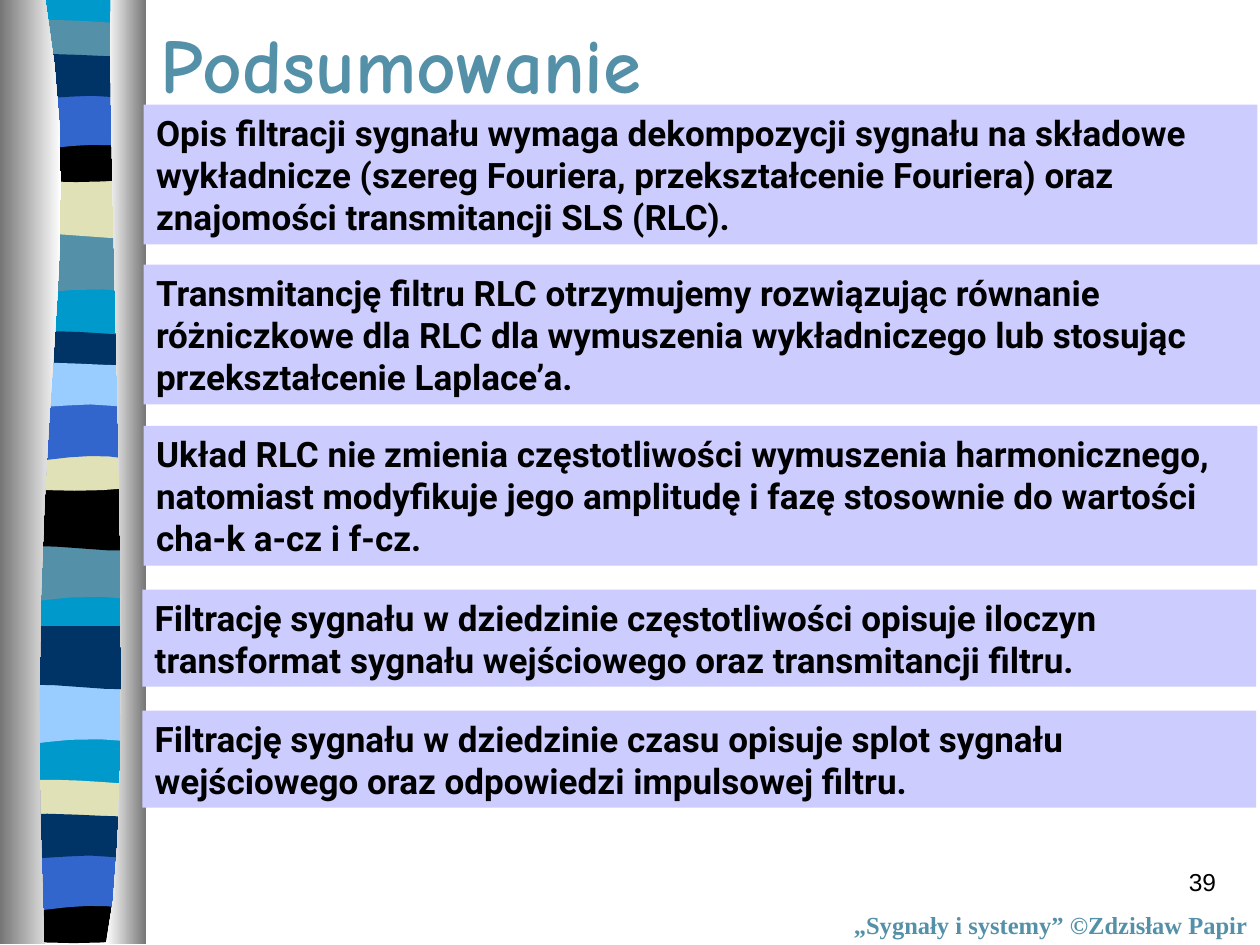
from math import ceil

from pptx import Presentation
from pptx.dml.color import RGBColor
from pptx.enum.shapes import MSO_SHAPE
from pptx.enum.text import MSO_ANCHOR, PP_ALIGN
from pptx.util import Inches, Pt

COLORS = {
    "cyan": "0099CC", "teal": "5490A8", "sand": "E1E1B7", "black": "000000",
    "blue": "3366CC", "navy": "003366", "sky": "99CCFF", "lilac": "CCCCFF",
    "gray": "767676", "white": "FFFFFF",
}

TITLE = "Podsumowanie"
FOOTER = "„Sygnały i systemy” ©Zdzisław Papir"
NUMBER = "39"

SUMMARY = [
    (1.14, 0.83, 8.84, 1.11, "Opis filtracji sygnału wymaga dekompozycji sygnału na składowe wykładnicze "
     "(szereg Fouriera, przekształcenie Fouriera) oraz znajomości transmitancji SLS (RLC)."),
    (1.14, 2.1, 8.86, 1.11, "Transmitancję filtru RLC otrzymujemy rozwiązując równanie różniczkowe dla RLC "
     "dla wymuszenia wykładniczego lub stosując przekształcenie Laplace’a."),
    (1.14, 3.38, 8.84, 1.11, "Układ RLC nie zmienia częstotliwości wymuszenia harmonicznego, natomiast "
     "modyfikuje jego amplitudę i fazę stosownie do wartości cha-k a-cz i f-cz."),
    (1.13, 4.68, 8.84, 0.77, "Filtrację sygnału w dziedzinie częstotliwości opisuje iloczyn transformat "
     "sygnału wejściowego oraz transmitancji filtru."),
    (1.13, 5.64, 8.84, 0.77, "Filtrację sygnału w dziedzinie czasu opisuje splot sygnału wejściowego "
     "oraz odpowiedzi impulsowej filtru."),
]

WAVES = {
    "sag": [(1.08, 0), (1.08, 0.47), (0.34, 0.39, 0.18, 0.55, 0, 0.47), (0, 0)],
    "swell": [(1.08, 0), (1.08, 0.48), (0.91, 0.55, 0.34, 0.42, 0, 0.48), (0, 0)],
    "lens": [(1.08, 0.05), (1.08, 0.29), (0.91, 0.33, 0.18, 0.33, 0, 0.29), (0, 0.05),
             (0.07, 0, 0.24, 0.01, 0.42, 0.01), (0.6, 0.01, 0.95, 0.04, 1.08, 0.05)],
    "bowl": [(1.08, 0), (1.08, 0.32), (0.91, 0.38, 0.18, 0.38, 0, 0.32), (0, 0),
             (0.67, 0.05, 0.86, 0, 1.08, 0)],
    "arch": [(1.08, 0), (1.08, 0.48), (0.91, 0.42, 0.84, 0.42, 0.66, 0.42),
             (0.48, 0.42, 0.16, 0.48, 0, 0.48), (0, 0)],
    "ripple": [(1.08, 0.05), (1.08, 0.36), (1.01, 0.41, 0.85, 0.36, 0.67, 0.36),
               (0.49, 0.36, 0.11, 0.41, 0, 0.36), (0, 0.05),
               (0.15, 0, 0.74, 0.05, 0.92, 0.05)],
}

BAND_GROUPS = [
    (0.06, [("sag", 1.85, "teal"), ("swell", 1.39, "sand"), ("lens", 0.15, "teal"),
            ("bowl", 1.08, "black"), ("arch", 0.73, "blue"), ("ripple", 0.4, "navy")]),
    (0.05, [("sag", 4.29, "teal"), ("swell", 3.87, "black"), ("lens", 2.62, "navy"),
            ("bowl", 3.53, "sand"), ("arch", 3.2, "blue"), ("ripple", 2.85, "sky")]),
    (0.04, [("sag", 5.42, "sky"), ("swell", 4.97, "navy"), ("lens", 6.18, "sand"),
            ("bowl", 7.12, "black"), ("arch", 6.77, "blue"), ("ripple", 6.43, "navy")]),
]

BACKDROP = [(1.14, 0), (1.14, 7.47), (0.06, 7.47), (0.06, 0)]
LEFT_EDGE = [(0.36, 0), (0.72, 2.16, 0.17, 2.96, 0.35, 7.49), (0, 7.49), (0, 0)]
RIGHT_EDGE = [(0.88, 0), (0.84, 1.25, 1.11, 6.46, 0.84, 7.49), (1.16, 7.49), (1.16, 0)]

STEPS_PER_INCH = 5
MOST_STEPS = 12


def color(name):
    return RGBColor.from_string(COLORS[name])


def trace(outline):
    points = [outline[0]]
    for step in outline[1:]:
        if len(step) == 2:
            points.append(step)
            continue
        x0, y0 = points[-1]
        x1, y1, x2, y2, x3, y3 = step
        reach = max(abs(x3 - x0), abs(y3 - y0))
        count = min(MOST_STEPS, ceil(STEPS_PER_INCH * reach))
        for index in range(1, count + 1):
            t = index / count
            a, b, c, d = (1 - t) ** 3, 3 * t * (1 - t) ** 2, 3 * t * t * (1 - t), t ** 3
            points.append((a * x0 + b * x1 + c * x2 + d * x3, a * y0 + b * y1 + c * y2 + d * y3))
    return points


def draw_outline(page, outline, fills, left=0, top=0):
    points = [(Inches(left + x), Inches(top + y)) for x, y in trace(outline)]
    builder = page.shapes.build_freeform(*points[0])
    builder.add_line_segments(points[1:], close=True)
    shape = builder.convert_to_shape()
    shape.shadow.inherit = False
    shape.line.fill.background()
    if len(fills) == 1:
        shape.fill.solid()
        shape.fill.fore_color.rgb = color(fills[0])
    else:
        shape.fill.gradient()
        shape.fill.gradient_angle = 0
        for stop, name in zip(shape.fill.gradient_stops, fills):
            stop.color.rgb = color(name)


def write(box, text, *, font, size, ink="black", bold=False, align=PP_ALIGN.LEFT,
          anchor=MSO_ANCHOR.TOP, wrap=True):
    frame = box.text_frame
    frame.word_wrap = wrap
    frame.vertical_anchor = anchor
    para = frame.paragraphs[0]
    para.alignment = align
    span = para.add_run()
    span.text = text
    span.font.name = font
    span.font.size = Pt(size)
    span.font.bold = bold
    span.font.color.rgb = color(ink)


def main():
    deck = Presentation()
    deck.slide_width, deck.slide_height = Inches(10), Inches(7.5)
    page = deck.slides.add_slide(deck.slide_layouts[5])

    draw_outline(page, BACKDROP, ["cyan"])
    for left, bands in BAND_GROUPS:
        for wave, top, fill in bands:
            draw_outline(page, WAVES[wave], [fill], left, top)
    draw_outline(page, LEFT_EDGE, ["gray", "white"])
    draw_outline(page, RIGHT_EDGE, ["white", "gray"])

    title = page.shapes.title
    title.left, title.top, title.width, title.height = map(Inches, (1.17, 0, 8.5, 1))
    write(title, TITLE, font="Comic Neue", size=44, ink="teal", bold=True, anchor=MSO_ANCHOR.MIDDLE)

    footer = page.shapes.add_textbox(*map(Inches, (6.59, 7.17, 3.41, 0.34)))
    write(footer, FOOTER, font="Times New Roman", size=14, ink="teal", bold=True,
          align=PP_ALIGN.RIGHT, wrap=False)

    for *place, text in SUMMARY:
        box = page.shapes.add_shape(MSO_SHAPE.RECTANGLE, *map(Inches, place))
        box.shadow.inherit = False
        box.fill.solid()
        box.fill.fore_color.rgb = color("lilac")
        box.line.fill.background()
        write(box, text, font="Roboto", size=20, bold=True, anchor=MSO_ANCHOR.MIDDLE)

    number = page.shapes.add_textbox(*map(Inches, (7.67, 6.83, 2.08, 0.5)))
    write(number, NUMBER, font="Arial", size=14, align=PP_ALIGN.RIGHT)

    deck.save("out.pptx")


if __name__ == "__main__":
    main()
